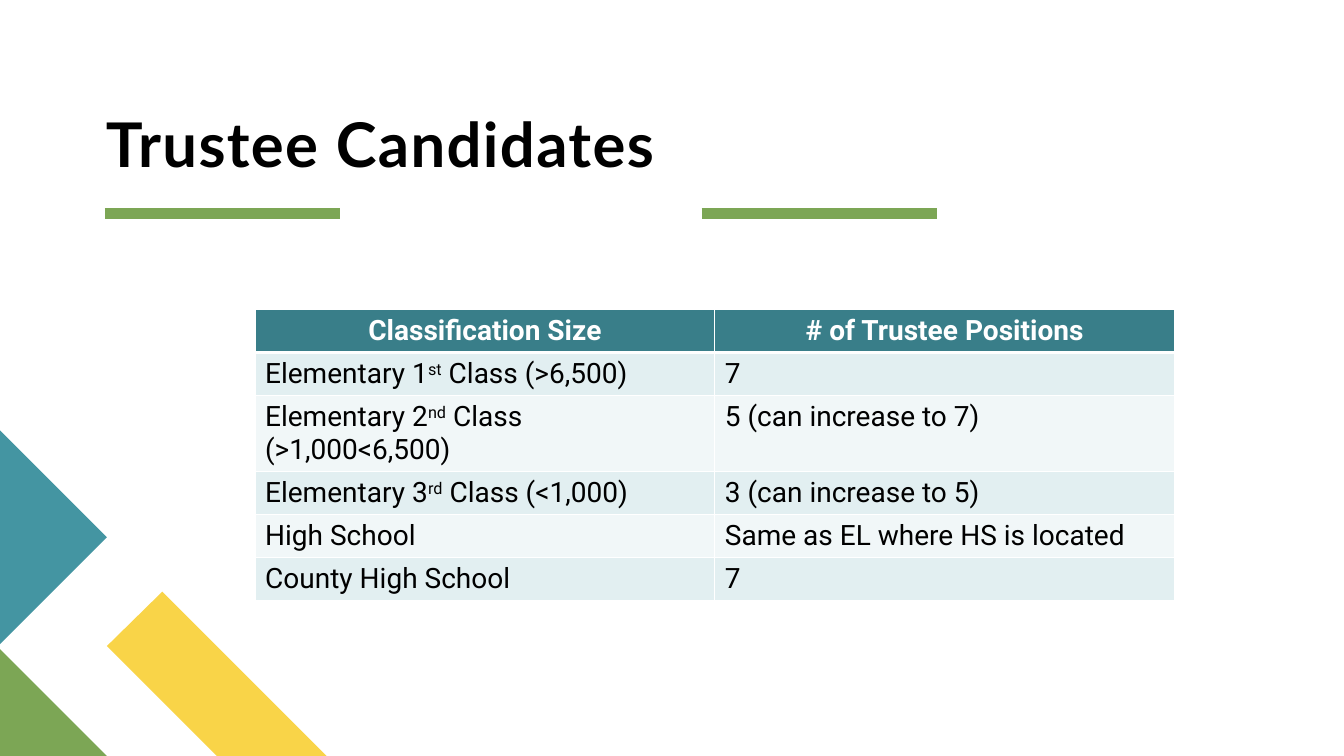
"""Build the Trustee Candidates slide with its table of positions by class size."""
from dataclasses import dataclass

from lxml.etree import SubElement
from pptx import Presentation
from pptx.dml.color import RGBColor
from pptx.enum.shapes import MSO_CONNECTOR as CONN
from pptx.enum.text import MSO_ANCHOR as ANCHOR, MSO_AUTO_SIZE as AUTO, PP_ALIGN as ALIGN
from pptx.oxml.ns import qn
from pptx.slide import Slide
from pptx.table import _Cell as Cell
from pptx.util import Emu, Pt

PX = 9144
BLACK = RGBColor(0x00, 0x00, 0x00)
WHITE = RGBColor(0xFF, 0xFF, 0xFF)
YELLOW = RGBColor(0xF9, 0xD4, 0x48)
GREEN = RGBColor(0x7C, 0xA6, 0x55)
TEAL = RGBColor(0x44, 0x95, 0xA2)
DARK_TEAL = RGBColor(0x39, 0x7E, 0x89)
BANDS = (RGBColor(0xF1, 0xF7, 0xF8), RGBColor(0xE2, 0xEF, 0xF1))


@dataclass
class Corner:
    """A filled polygon in the lower left of the slide."""
    points: list[tuple[int, int]]
    color: RGBColor


@dataclass
class Row:
    """A table row; carets enclose superscripts."""
    cells: tuple[str, str]
    height: int = 42


CORNERS = [
    Corner([(324, 750), (215, 750), (106, 641), (161, 587)], YELLOW),
    Corner([(106, 750), (0, 750), (0, 644)], GREEN),
    Corner([(0, 427), (106, 533), (0, 639)], TEAL),
]
RULE_LEFTS, RULE_TOP, RULE_WIDTH = (104, 696), 212, 233
ROWS = [
    Row(("Classification Size", "# of Trustee Positions")),
    Row(("Elementary 1^st^ Class (>6,500)", "7")),
    Row(("Elementary 2^nd^ Class (>1,000<6,500)", "5 (can increase to 7)"), 75),
    Row(("Elementary 3^rd^ Class (<1,000)", "3 (can increase to 5)")),
    Row(("High School", "Same as EL where HS is located")),
    Row(("County High School", "7")),
]
TABLE_LEFT, TABLE_TOP, COL_WIDTH = 253, 307, 456


def px(n: int) -> Emu:
    """Turn px into EMU."""
    return Emu(n * PX)


def add_corner(slide: Slide, corner: Corner) -> None:
    """Draw one corner polygon."""
    start, *rest = corner.points
    builder = slide.shapes.build_freeform(*start, scale=PX)
    builder.add_line_segments(rest, close=True)
    sp = builder.convert_to_shape()
    sp.shadow.inherit = False
    sp.fill.solid()
    sp.fill.fore_color.rgb = corner.color
    sp.line.fill.background()


def add_rule(slide: Slide, left: int) -> None:
    """Draw one thick rule under the title."""
    line = slide.shapes.add_connector(
        CONN.STRAIGHT, px(left), px(RULE_TOP), px(left + RULE_WIDTH), px(RULE_TOP))
    line.line.color.rgb = GREEN
    line.line.width = Pt(8)
    SubElement(line._element.spPr, qn("a:effectLst"))


def set_title(slide: Slide, text: str) -> None:
    """Place and format the title placeholder."""
    sp = slide.shapes.title
    sp.left, sp.top, sp.width, sp.height = map(px, (105, 96, 849, 83))
    tf = sp.text_frame
    tf.word_wrap, tf.auto_size = True, AUTO.NONE
    tf.vertical_anchor = ANCHOR.BOTTOM
    tf.margin_left = tf.margin_top = tf.margin_right = tf.margin_bottom = 0
    p = tf.paragraphs[0]
    p.alignment, p.line_spacing = ALIGN.LEFT, 0.9
    r = p.add_run()
    r.text = text
    r.font.name, r.font.size, r.font.bold = "Lato", Pt(44), True
    r.font.color.rgb = BLACK
    r._r.get_or_add_rPr().set("spc", "100")


def set_borders(cell: Cell, top: int, bottom: int) -> None:
    """Give a cell white borders, with top and bottom widths in points."""
    tc_pr = cell._tc.get_or_add_tcPr()
    widths = {"lnL": 1, "lnR": 1, "lnT": top, "lnB": bottom}
    for i, (side, width) in enumerate(widths.items()):
        ln = SubElement(tc_pr, qn(f"a:{side}"), w=str(Pt(width)))
        fill = SubElement(ln, qn("a:solidFill"))
        SubElement(fill, qn("a:srgbClr"), val=str(WHITE))
        tc_pr.insert(i, ln)


def fill_cell(cell: Cell, text: str, row: int) -> None:
    """Write and format one table cell."""
    header = row == 0
    cell.fill.solid()
    cell.fill.fore_color.rgb = DARK_TEAL if header else BANDS[row % 2]
    set_borders(cell, 3 if row == 1 else 1, 3 if header else 1)
    p = cell.text_frame.paragraphs[0]
    p.alignment = ALIGN.CENTER if header else ALIGN.LEFT
    for i, part in enumerate(text.split("^")):
        r = p.add_run()
        r.text = part
        r.font.name, r.font.size, r.font.bold = "Roboto", Pt(20), header
        r.font.color.rgb = WHITE if header else BLACK
        if i % 2:
            r._r.get_or_add_rPr().set("baseline", "30000")


def add_positions(slide: Slide) -> None:
    """Add the table of trustee positions."""
    height = sum(row.height for row in ROWS)
    table = slide.shapes.add_table(
        len(ROWS), 2, px(TABLE_LEFT), px(TABLE_TOP), px(2 * COL_WIDTH), px(height)).table
    table.first_row = table.horz_banding = False
    for i, row in enumerate(ROWS):
        table.rows[i].height = px(row.height)
        for j, text in enumerate(row.cells):
            fill_cell(table.cell(i, j), text, i)


def main() -> None:
    """Build and save the slide."""
    prs = Presentation()
    prs.slide_width, prs.slide_height = px(1333), px(750)
    slide = prs.slides.add_slide(prs.slide_layouts[5])
    for corner in CORNERS:
        add_corner(slide, corner)
    for left in RULE_LEFTS:
        add_rule(slide, left)
    set_title(slide, "Trustee Candidates")
    add_positions(slide)
    prs.save("out.pptx")


if __name__ == "__main__":
    main()
